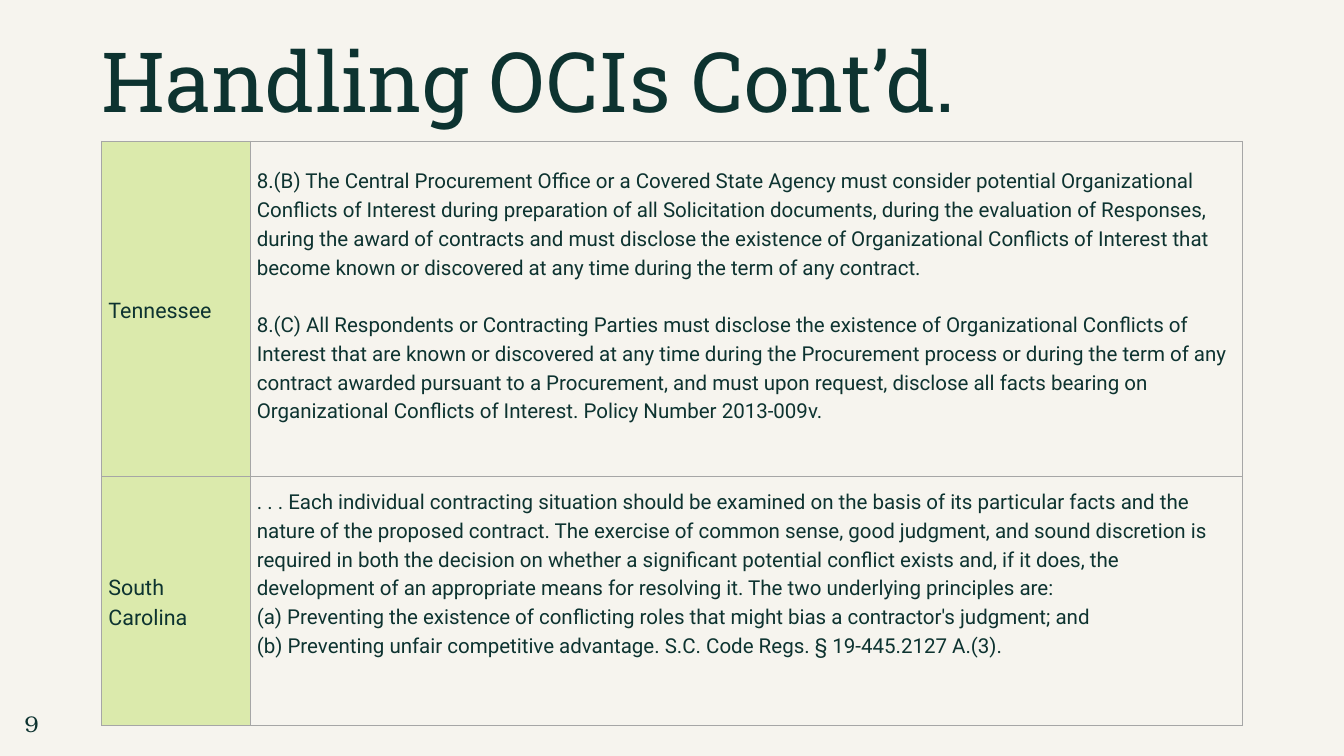
from lxml import etree
from pptx import Presentation
from pptx.dml.color import RGBColor
from pptx.enum.text import MSO_ANCHOR, MSO_AUTO_SIZE, PP_ALIGN
from pptx.oxml.ns import qn
from pptx.util import Pt

LEFT, CENTER = PP_ALIGN.LEFT, PP_ALIGN.CENTER
TOP, MIDDLE = MSO_ANCHOR.TOP, MSO_ANCHOR.MIDDLE
NO_AUTOFIT = MSO_AUTO_SIZE.NONE
TITLE_ONLY = 5

# state, space kept free below the rule text, paragraph gap, rule paragraphs
RULES = [
    ("Tennessee", 30.8, 30.8, [
        "8.(B) The Central Procurement Office or a Covered State Agency must consider "
        "potential Organizational Conflicts of Interest during preparation of all "
        "Solicitation documents, during the evaluation of Responses, during the award of "
        "contracts and must disclose the existence of Organizational Conflicts of Interest "
        "that become known or discovered at any time during the term of any contract.",
        "8.(C) All Respondents or Contracting Parties must disclose the existence of "
        "Organizational Conflicts of Interest that are known or discovered at any time "
        "during the Procurement process or during the term of any contract awarded pursuant "
        "to a Procurement, and must upon request, disclose all facts bearing on "
        "Organizational Conflicts of Interest. Policy Number 2013-009v.",
    ]),
    ("South Carolina", 61.6, 0, [
        ". . . Each individual contracting situation should be examined on the basis of its "
        "particular facts and the nature of the proposed contract. The exercise of common "
        "sense, good judgment, and sound discretion is required in both the decision on "
        "whether a significant potential conflict exists and, if it does, the development "
        "of an appropriate means for resolving it. The two underlying principles are:",
        "(a) Preventing the existence of conflicting roles that might bias a contractor's "
        "judgment; and",
        "(b) Preventing unfair competitive advantage. S.C. Code Regs. § 19-445.2127 A.(3).",
    ]),
]


def color(hex_string):
    return RGBColor.from_string(hex_string)


class SlideBuilder:
    INK, PAPER, LABEL, RULE = "0D3330", "F6F4EE", "DBEAAC", "A6A6A6"
    BODY, HEADING, NUMBER = "Roboto", "Roboto Slab", "TeX Gyre Bonum"
    CELL_MARGIN = 7.2

    def __init__(self, prs):
        self.slide = prs.slides.add_slide(prs.slide_layouts[TITLE_ONLY])
        background = self.slide.background.fill
        background.solid()
        background.fore_color.rgb = color(self.PAPER)

    def set_text(self, frame, paragraphs, font, size, leading, align=LEFT, gap=0):
        """Fill a text frame, with gap points between its paragraphs."""
        for index, text in enumerate(paragraphs):
            paragraph = frame.add_paragraph() if index else frame.paragraphs[0]
            paragraph.text = text
            paragraph.alignment = align
            paragraph.line_spacing = Pt(leading)
            paragraph.space_before = Pt(gap if index else 0)
            paragraph.font.name = font
            paragraph.font.size = Pt(size)
            paragraph.font.color.rgb = color(self.INK)

    def plain_frame(self, frame, wrap):
        frame.margin_left = frame.margin_right = 0
        frame.margin_top = frame.margin_bottom = 0
        frame.vertical_anchor = TOP
        frame.auto_size = NO_AUTOFIT
        frame.word_wrap = wrap

    def title(self, text, left, top, width, height):
        title = self.slide.shapes.title
        title.left, title.top = Pt(left), Pt(top)
        title.width, title.height = Pt(width), Pt(height)
        self.plain_frame(title.text_frame, wrap=True)
        self.set_text(title.text_frame, [text], self.HEADING, 89, 106.8)

    def page_number(self, text, left, top, width, height):
        box = self.slide.shapes.add_textbox(Pt(left), Pt(top), Pt(width), Pt(height))
        self.plain_frame(box.text_frame, wrap=False)
        self.set_text(box.text_frame, [text], self.NUMBER, 24.3, 34, CENTER)

    def cell(self, cell, paragraphs, size, leading, fill=None, gap=0, free_below=0):
        cell.vertical_anchor = MIDDLE
        cell.margin_left = cell.margin_right = cell.margin_top = Pt(self.CELL_MARGIN)
        cell.margin_bottom = Pt(self.CELL_MARGIN + free_below)
        self.set_text(cell.text_frame, paragraphs, self.BODY, size, leading, gap=gap)
        self.borders(cell)
        if fill:
            cell.fill.solid()
            cell.fill.fore_color.rgb = color(fill)
        else:
            cell.fill.background()

    def borders(self, cell):
        properties = cell._tc.get_or_add_tcPr()
        for side in ("a:lnL", "a:lnR", "a:lnT", "a:lnB"):
            line = etree.SubElement(properties, qn(side), w=str(Pt(0.75)))
            fill = etree.SubElement(line, qn("a:solidFill"))
            etree.SubElement(fill, qn("a:srgbClr"), val=self.RULE)

    def rules_table(self, rules, left, top, widths, heights):
        table = self.slide.shapes.add_table(
            len(heights), len(widths), Pt(left), Pt(top),
            Pt(sum(widths)), Pt(sum(heights))).table
        table.first_row = table.horz_banding = False
        for column, width in zip(table.columns, widths):
            column.width = Pt(width)
        for row, height, rule in zip(table.rows, heights, rules):
            row.height = Pt(height)
            state, free_below, gap, paragraphs = rule
            self.cell(row.cells[0], [state], 23, 32.2, fill=self.LABEL)
            self.cell(row.cells[1], paragraphs, 22, 30.8, gap=gap, free_below=free_below)


def main():
    prs = Presentation()
    prs.slide_width, prs.slide_height = Pt(1440), Pt(810)
    builder = SlideBuilder(prs)
    builder.rules_table(RULES, 109, 151.3, widths=[159, 1063], heights=[359.3, 266.4])
    builder.title("Handling OCIs Cont’d.", 109, 31, 1007, 103)
    builder.page_number("9", 27.4, 755.3, 13, 33)
    prs.save("out.pptx")


if __name__ == "__main__":
    main()
